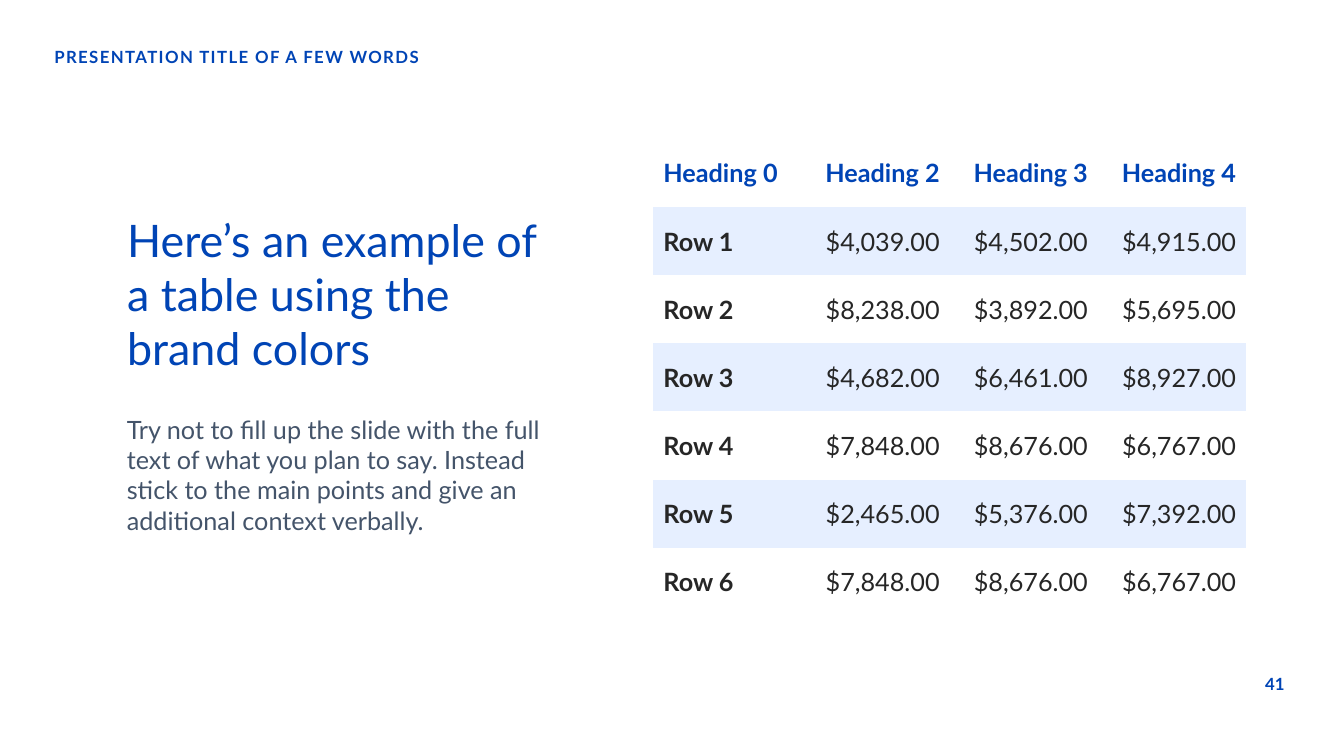
from pptx import Presentation
from pptx.dml.color import RGBColor
from pptx.enum import text
from pptx.oxml import ns
from pptx.util import Inches, Pt

BLUE, SLATE, INK, BAND, WHITE = "0044B5", "44546A", "262626", "E6EFFF", "FFFFFF"
NO_GRID = "{2D5ABB26-0587-4C30-8999-92F81FD0307C}"
LEFT, RIGHT = text.PP_ALIGN.LEFT, text.PP_ALIGN.RIGHT

TITLE = ("Here’s an example of a table using the brand colors",
         (1.16, 2.06, 4.38, 1.72), {"size": 32, "color": BLUE})
BOXES = [
    ("PRESENTATION TITLE OF A FEW WORDS", (0.44, 0.44, 5.49, 0.29),
     {"size": 12, "color": BLUE, "bold": True, "spacing": 0.9, "tracking": 100}),
    ("41", (12.42, 6.63, 0.42, 0.3),
     {"size": 12, "color": BLUE, "bold": True, "align": RIGHT}),
    ("Try not to fill up the slide with the full text of what you plan to say. "
     "Instead stick to the main points and give an additional context verbally.",
     (1.16, 4.06, 4.38, 1.31), {"size": 18, "color": SLATE}),
]
ROWS = [
    ("Heading 0", "Heading 2", "Heading 3", "Heading 4"),
    ("Row 1", "$4,039.00", "$4,502.00", "$4,915.00"),
    ("Row 2", "$8,238.00", "$3,892.00", "$5,695.00"),
    ("Row 3", "$4,682.00", "$6,461.00", "$8,927.00"),
    ("Row 4", "$7,848.00", "$8,676.00", "$6,767.00"),
    ("Row 5", "$2,465.00", "$5,376.00", "$7,392.00"),
    ("Row 6", "$7,848.00", "$8,676.00", "$6,767.00"),
]
TABLE_BOX = (6.48, 1.38, 5.88, 4.73)


def rgb(value):
    return RGBColor.from_string(value)


def write(tf, words, size, color, bold=False, align=LEFT, spacing=1.0, tracking=0):
    p = tf.paragraphs[0]
    for name, value in {"alignment": align, "line_spacing": spacing,
                        "space_before": Pt(0)}.items():
        setattr(p, name, value)
    r = p.add_run()
    r.text = words
    for name, value in {"name": "Lato", "size": Pt(size), "bold": bold}.items():
        setattr(r.font, name, value)
    r.font.color.rgb = rgb(color)
    if tracking:
        r.font._element.set("spc", str(tracking))


def frame(sp):
    tf = sp.text_frame
    for name, value in {"word_wrap": True, "auto_size": text.MSO_AUTO_SIZE.NONE,
                        "vertical_anchor": text.MSO_ANCHOR.TOP}.items():
        setattr(tf, name, value)
    return tf


def add_table(s):
    table = s.shapes.add_table(len(ROWS), len(ROWS[0]), *map(Inches, TABLE_BOX)).table
    table.first_row = table.horz_banding = False
    table._tbl.tblPr.find(ns.qn("a:tableStyleId")).text = NO_GRID
    for i, row in enumerate(ROWS):
        for j, words in enumerate(row):
            cell = table.cell(i, j)
            cell.vertical_anchor = text.MSO_ANCHOR.MIDDLE
            cell.fill.solid()
            cell.fill.fore_color.rgb = rgb(BAND if i % 2 else WHITE)
            write(cell.text_frame, words, 18, INK if i else BLUE,
                  bold=i == 0 or j == 0, align=RIGHT if j else LEFT)


def main():
    prs = Presentation()
    prs.slide_width, prs.slide_height = Inches(13.33), Inches(7.5)
    s = prs.slides.add_slide(prs.slide_layouts[5])
    words, box, style = TITLE
    sp = s.shapes.title
    sp.left, sp.top, sp.width, sp.height = map(Inches, box)
    write(frame(sp), words, **style)
    for words, box, style in BOXES:
        write(frame(s.shapes.add_textbox(*map(Inches, box))), words, **style)
    add_table(s)
    prs.save("out.pptx")


if __name__ == "__main__":
    main()
